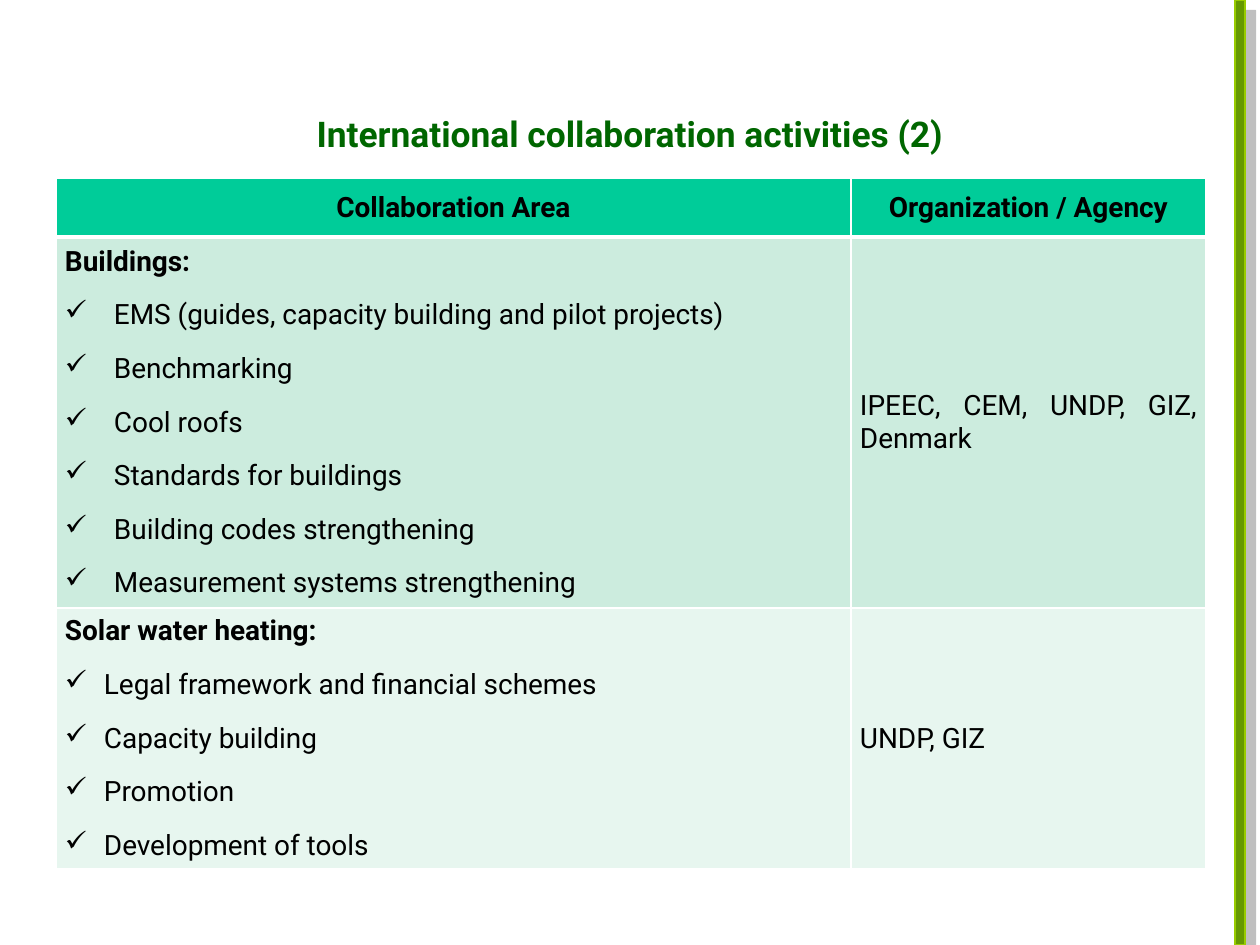
"""Build the slide on international collaboration activities."""
from dataclasses import dataclass

from lxml import etree
from pptx import Presentation
from pptx import util as u
from pptx.dml.color import RGBColor
from pptx.enum import shapes, text
from pptx.oxml import ns

PX = 914400 / 126


def px(length):
    """Turn whole pixels into EMU."""
    return u.Emu(round(length * PX))


@dataclass(frozen=True)
class Theme:
    """Hold the colours and type sizes of the slide."""
    font: str = "Roboto"
    title_size: float = 20.2
    body_size: float = 16
    title: str = "006600"
    ink: str = "000000"
    header: str = "00CC99"
    bands: tuple = ("CCECDE", "E7F6EF")
    grid: str = "FFFFFF"
    bar: str = "669900"
    bar_line: str = "99CC00"
    shadow: str = "808080"


def add_element(parent, tag, **attributes):
    """Append a DrawingML element and return it."""
    return etree.SubElement(parent, ns.qn(tag), {k: str(v) for k, v in attributes.items()})


class SlideBuilder:
    """Draw styled elements on the current slide."""

    def __init__(self, slide, theme):
        """Keep the slide and its style."""
        self.slide, self.theme = slide, theme

    def add_run(self, paragraph, words, size, color, bold):
        """Add one formatted run."""
        run = paragraph.add_run()
        run.text = words
        font = run.font
        font.name, font.size, font.bold = self.theme.font, u.Pt(size), bold
        font.color.rgb = RGBColor.from_string(color)

    def add_title(self, words, left, top, width, height):
        """Place and format the title placeholder."""
        title = self.slide.shapes.title
        title.left, title.top, title.width, title.height = map(px, (left, top, width, height))
        frame = title.text_frame
        frame.word_wrap = False
        frame.auto_size = text.MSO_AUTO_SIZE.NONE
        frame.vertical_anchor = text.MSO_ANCHOR.TOP
        paragraph = frame.paragraphs[0]
        paragraph.alignment = text.PP_ALIGN.CENTER
        paragraph.line_spacing = 1.07
        paragraph.space_before = u.Pt(0)
        self.add_run(paragraph, words, self.theme.title_size, self.theme.title, True)

    def add_bar(self, left, top, width, height):
        """Add the vertical bar with its offset shadow."""
        bar = self.slide.shapes.add_shape(
            shapes.MSO_SHAPE.RECTANGLE, *map(px, (left, top, width, height)))
        bar.fill.solid()
        bar.fill.fore_color.rgb = RGBColor.from_string(self.theme.bar)
        bar.line.color.rgb = RGBColor.from_string(self.theme.bar_line)
        bar.line.width = u.Pt(0.75)
        bar.shadow.inherit = False
        effects = bar._element.spPr.find(ns.qn("a:effectLst"))
        shadow = add_element(effects, "a:outerShdw", blurRad=0, dist=u.Pt(8.5),
                             dir=45 * 60000, algn="ctr", rotWithShape=0)
        color = add_element(shadow, "a:srgbClr", val=self.theme.shadow)
        add_element(color, "a:alpha", val=50000)

    def add_table(self, left, top, widths, heights):
        """Add an empty table and return it."""
        frame = self.slide.shapes.add_table(
            len(heights), len(widths), px(left), px(top), px(sum(widths)), px(sum(heights)))
        for column, width in zip(frame.table.columns, widths):
            column.width = px(width)
        for row, height in zip(frame.table.rows, heights):
            row.height = px(height)
        return frame.table

    def format_cell(self, cell, fill, top_line=1, bottom_line=1):
        """Set the borders, fill, margins and anchor of a cell."""
        properties = cell._tc.get_or_add_tcPr()
        sides = {"a:lnL": 1, "a:lnR": 1, "a:lnT": top_line, "a:lnB": bottom_line}
        for side, weight in sides.items():
            line = add_element(properties, side, w=u.Pt(weight))
            add_element(add_element(line, "a:solidFill"), "a:srgbClr", val=self.theme.grid)
        cell.fill.solid()
        cell.fill.fore_color.rgb = RGBColor.from_string(fill)
        cell.margin_left = cell.margin_right = px(9)
        cell.margin_top = cell.margin_bottom = px(5)
        cell.vertical_anchor = text.MSO_ANCHOR.MIDDLE

    def fill_cell(self, cell, words, bold=False, align=text.PP_ALIGN.JUSTIFY, items=(), indent=0):
        """Write a lead line and its check-marked items."""
        frame = cell.text_frame
        for index, line in enumerate((words, *items)):
            paragraph = frame.add_paragraph() if index else frame.paragraphs[0]
            if index:
                properties = paragraph._p.get_or_add_pPr()
                properties.set("marL", str(px(indent)))
                properties.set("indent", str(-px(indent)))
                add_element(properties, "a:buChar", char="✓")
                paragraph.space_before = u.Pt(6)
            paragraph.alignment = align
            paragraph.space_after = u.Pt(6)
            self.add_run(paragraph, line, self.theme.body_size, self.theme.ink,
                         bold and not index)


HEADINGS = ("Collaboration Area", "Organization / Agency")
AREAS = (
    ("Buildings:", 49,
     ("EMS (guides, capacity building and pilot projects)", "Benchmarking", "Cool roofs",
      "Standards for buildings", "Building codes strengthening",
      "Measurement systems strengthening"),
     "IPEEC, CEM, UNDP, GIZ, Denmark"),
    ("Solar water heating:", 39,
     ("Legal framework and financial schemes", "Capacity building", "Promotion",
      "Development of tools"),
     "UNDP, GIZ"),
)


def main():
    """Build and save the presentation."""
    presentation = Presentation()
    presentation.slide_width, presentation.slide_height = px(1260), px(945)
    slide = presentation.slides.add_slide(presentation.slide_layouts[5])
    theme = Theme()
    builder = SlideBuilder(slide, theme)
    builder.add_bar(1235, 0, 10, 945)
    table = builder.add_table(56, 178, (795, 355), (59, 371, 261))
    for column, heading in enumerate(HEADINGS):
        cell = table.cell(0, column)
        builder.format_cell(cell, theme.header, bottom_line=3)
        builder.fill_cell(cell, heading, bold=True, align=text.PP_ALIGN.CENTER)
    for row, (area, indent, items, agencies) in enumerate(AREAS, 1):
        for column in range(len(HEADINGS)):
            builder.format_cell(table.cell(row, column), theme.bands[row - 1],
                                top_line=3 if row == 1 else 1)
        builder.fill_cell(table.cell(row, 0), area, bold=True, items=items, indent=indent)
        builder.fill_cell(table.cell(row, 1), agencies)
    builder.add_title("International collaboration activities (2)", 268, 103, 723, 54)
    presentation.save("out.pptx")


if __name__ == "__main__":
    main()
